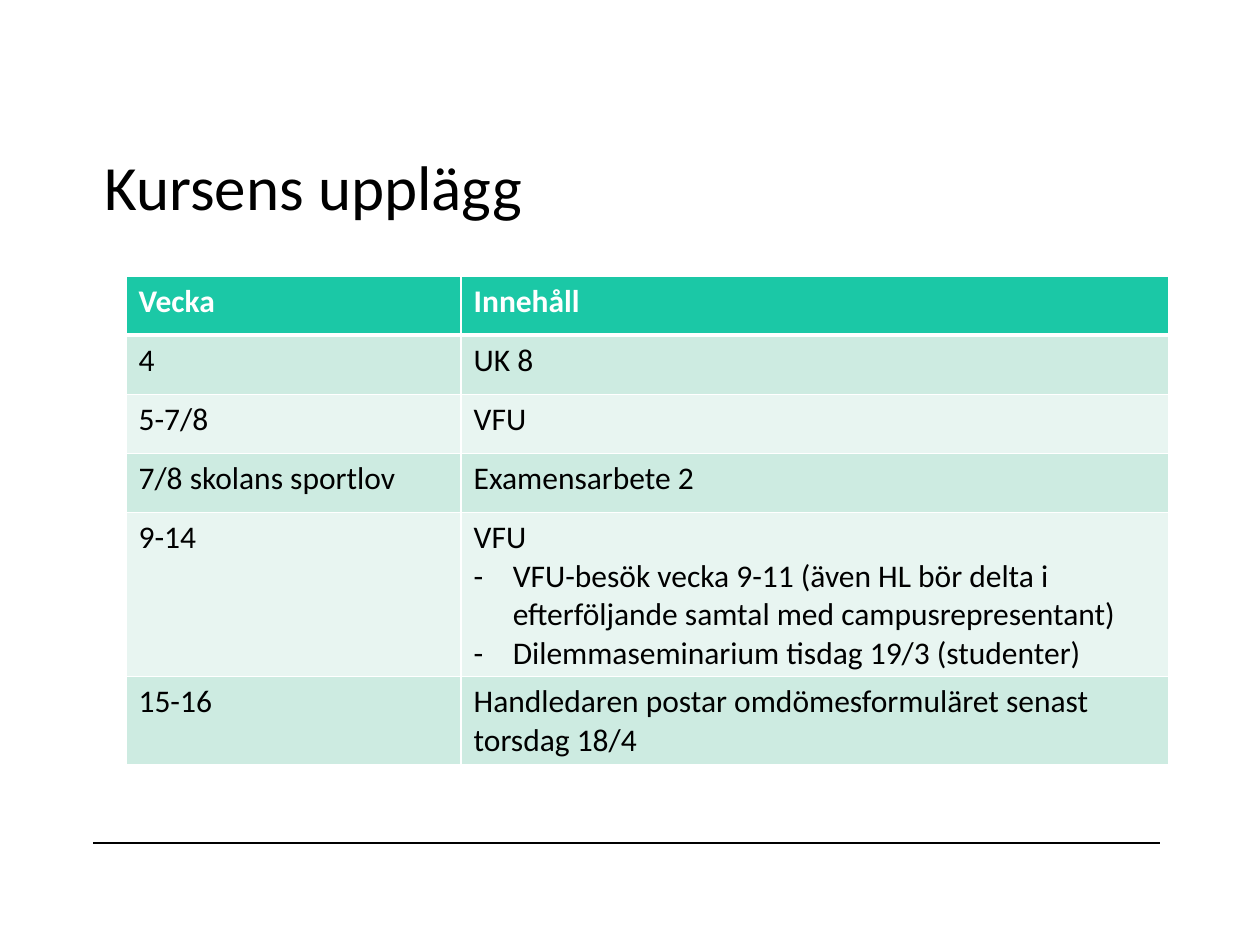
from pptx import Presentation
from pptx.dml.color import RGBColor
from pptx.enum.shapes import MSO_CONNECTOR
from pptx.enum.text import MSO_ANCHOR
from pptx.oxml.ns import qn
from pptx.util import Inches, Pt
from lxml.etree import SubElement

TITLE = "Kursens upplägg"
# Each cell is a list of paragraphs; those after the first are dash items.
ROWS = [
    (["Vecka"], ["Innehåll"]),
    (["4"], ["UK 8"]),
    (["5-7/8"], ["VFU"]),
    (["7/8 skolans sportlov"], ["Examensarbete 2"]),
    (["9-14"], [
        "VFU",
        "VFU-besök vecka 9-11 (även HL bör delta i efterföljande samtal "
        "med campusrepresentant)",
        "Dilemmaseminarium tisdag 19/3 (studenter)",
    ]),
    (["15-16"], ["Handledaren postar omdömesformuläret senast torsdag 18/4"]),
]
WIDTHS = (2.66, 5.62)
ROW_H = 0.47
COLORS = {"ink": "000000", "paper": "FFFFFF", "head": "1BC8A6",
          "odd": "CDEBE1", "even": "E8F5F1"}
FONT = "Calibri"


def rgb(name):
    return RGBColor.from_string(COLORS[name])


def style(para, size, color, bold=False):
    font = para.runs[0].font
    font.name, font.size, font.bold = FONT, Pt(size), bold
    font.color.rgb = rgb(color)


def add_dash(para):
    props = para._p.get_or_add_pPr()
    props.set("marL", str(Inches(0.31)))
    props.set("indent", str(-Inches(0.31)))
    SubElement(props, qn("a:buFont"), typeface=FONT)
    SubElement(props, qn("a:buChar"), char="-")


def add_borders(cell, base):
    """Draw white cell edges, with the bottom one base points wide."""
    props = cell._tc.get_or_add_tcPr()
    for i, (side, width) in enumerate(
            (("lnL", 1), ("lnR", 1), ("lnT", 1), ("lnB", base))):
        edge = SubElement(props, qn(f"a:{side}"), w=str(Pt(width)))
        fill = SubElement(edge, qn("a:solidFill"))
        SubElement(fill, qn("a:srgbClr"), val=COLORS["paper"])
        props.insert(i, edge)


def fill_cell(cell, lines, row):
    head = row == 0
    cell.text_frame.text = "\n".join(lines)
    for i, para in enumerate(cell.text_frame.paragraphs):
        if i:
            add_dash(para)
        style(para, 18, "paper" if head else "ink", head)
    cell.fill.solid()
    cell.fill.fore_color.rgb = rgb(
        "head" if head else "odd" if row % 2 else "even")
    # The header's lower edge is shared with the top of the next row.
    add_borders(cell, 3 if head else 1)
    if row == 1:
        cell._tc.tcPr.find(qn("a:lnT")).set("w", str(Pt(3)))


def add_title(slide):
    box = slide.shapes.add_textbox(
        Inches(0.75), Inches(1.09), Inches(8.46), Inches(0.91))
    frame = box.text_frame
    frame.word_wrap = True
    frame.vertical_anchor = MSO_ANCHOR.TOP
    frame.margin_left = frame.margin_top = Inches(0.08)
    frame.text = TITLE
    style(frame.paragraphs[0], 36, "ink")


def add_rule(slide):
    rule = slide.shapes.add_connector(
        MSO_CONNECTOR.STRAIGHT,
        Inches(0.74), Inches(6.69), Inches(9.21), Inches(6.69))
    rule.line.color.rgb = rgb("ink")
    rule.line.width = Pt(0.75)
    SubElement(rule._element.spPr, qn("a:effectLst"))


def add_plan(slide):
    table = slide.shapes.add_table(
        len(ROWS), len(WIDTHS), Inches(1), Inches(2.19),
        Inches(sum(WIDTHS)), Inches(ROW_H * len(ROWS))).table
    for col, width in zip(table.columns, WIDTHS):
        col.width = Inches(width)
    for r, row in enumerate(ROWS):
        table.rows[r].height = Inches(ROW_H)
        for c, lines in enumerate(row):
            fill_cell(table.cell(r, c), lines, r)


def main():
    deck = Presentation()
    deck.slide_width, deck.slide_height = Inches(10), Inches(7.5)
    slide = deck.slides.add_slide(deck.slide_layouts[6])
    add_rule(slide)
    add_title(slide)
    add_plan(slide)
    deck.save("out.pptx")


if __name__ == "__main__":
    main()
